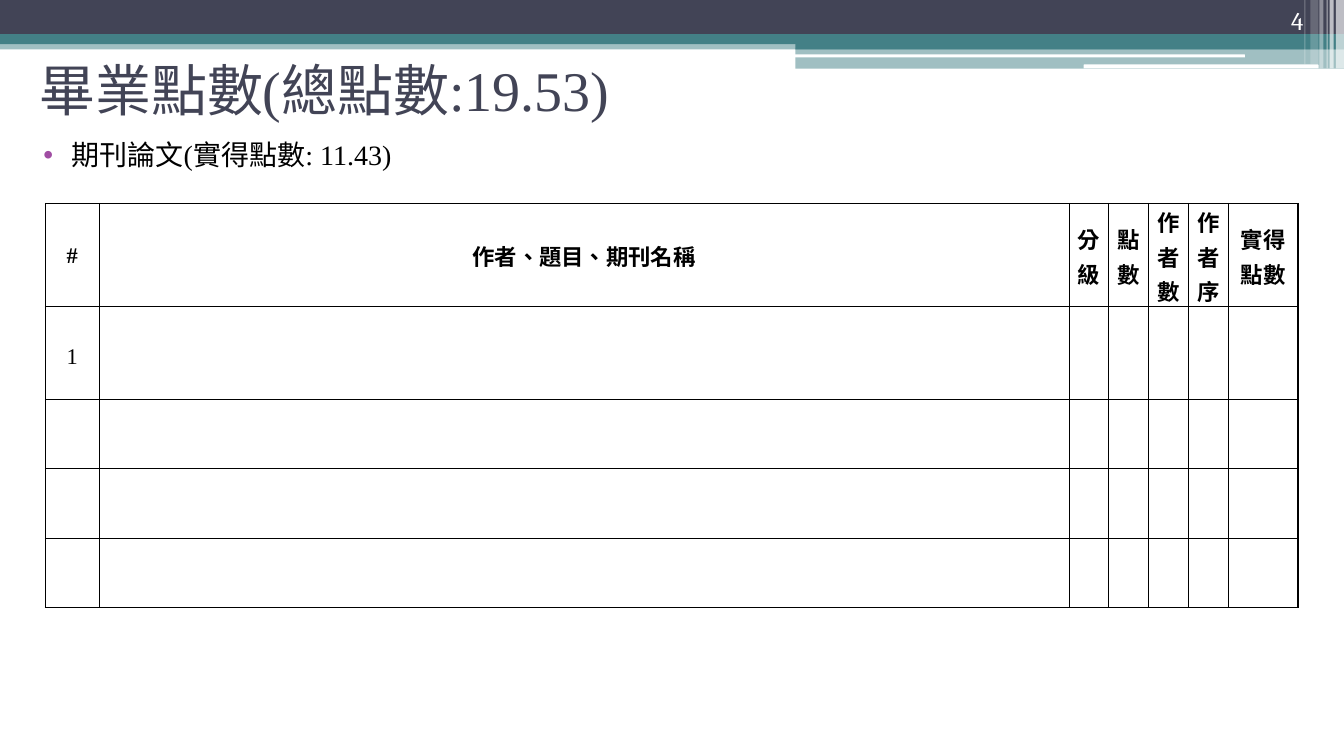
from dataclasses import dataclass

import pptx
import pptx.dml.color
import pptx.enum.lang
import pptx.enum.shapes
import pptx.enum.text
import pptx.oxml
import pptx.oxml.ns
import pptx.util

RGBColor = pptx.dml.color.RGBColor
Align = pptx.enum.text.PP_ALIGN
Anchor = pptx.enum.text.MSO_ANCHOR
Preset = pptx.enum.shapes.MSO_SHAPE

NAVY = RGBColor(0x42, 0x44, 0x56)
TEAL = RGBColor(0x43, 0x80, 0x86)
PURPLE = RGBColor(0xA0, 0x4D, 0xA3)
WHITE = RGBColor(0xFF, 0xFF, 0xFF)
BLACK = RGBColor(0, 0, 0)

SERIF = "Times New Roman"
SLIDE_WIDTH = pptx.util.Inches(13.333)
SLIDE_HEIGHT = pptx.util.Inches(7.5)


@dataclass(frozen=True)
class Area:
    """A rectangle in percent of the slide's width and height."""
    left: float
    top: float
    width: float
    height: float

    def lengths(self) -> tuple[int, int, int, int]:
        return (across(self.left), down(self.top),
                across(self.width), down(self.height))


@dataclass(frozen=True)
class Bar:
    area: Area
    color: RGBColor
    opacity: int = 100
    rounded: bool = False


HEADER_BARS = [
    Bar(Area(0, 5.33, 100, 1.2), TEAL, 50),
    Bar(Area(0, 0, 100, 4.53), NAVY),
    Bar(Area(0, 4.53, 100, 1.33), TEAL),
    Bar(Area(59.18, 5.2, 40.82, 1.33), TEAL),
    Bar(Area(59.18, 6.4, 40.82, 2.67), TEAL, 50),
    Bar(Area(59.1, 7.2, 33.53, 0.4), WHITE, rounded=True),
    Bar(Area(80.63, 8.53, 17.48, 0.53), WHITE, rounded=True),
    Bar(Area(99.4, 0, 0.6, 9.07), WHITE, 65),
    Bar(Area(98.93, 0, 0.3, 9.07), WHITE, 65),
    Bar(Area(98.7, 0, 0.08, 9.07), WHITE, 60),
    Bar(Area(98.18, 0, 0.3, 9.07), WHITE, 40),
    Bar(Area(97.5, 0, 0.6, 8.53), WHITE, 20),
    Bar(Area(97.05, 0, 0.08, 8.53), WHITE, 30),
]

TITLE_AREA = Area(2.18, 1.73, 90, 15.6)
BODY_AREA = Area(1.58, 15.33, 90, 71.2)
NUMBER_AREA = Area(89.4, 0, 8.33, 5.33)

HEADINGS = ["#", "作者、題目、期刊名稱", "分級", "點數", "作者數", "作者序", "實得點數"]
COLUMN_SHARES = [4, 72.17] + [2.96] * 4 + [5.2]
ROW_SHARES = [13.6, 12.27] + [9.2] * 3
TABLE_AREA = Area(3.38, 26.93, sum(COLUMN_SHARES), sum(ROW_SHARES))


def across(percent: float) -> int:
    return round(SLIDE_WIDTH * percent / 100)


def down(percent: float) -> int:
    return round(SLIDE_HEIGHT * percent / 100)


def write_text(frame, text: str, *, size: float, color: RGBColor = BLACK,
               font: str = SERIF, bold: bool = False, align=Align.LEFT,
               anchor=Anchor.TOP, line_spacing: float = 1.0,
               space_before: float = 0):
    """Fill a text frame with one formatted paragraph and return it."""
    frame.word_wrap = True
    frame.vertical_anchor = anchor
    paragraph = frame.paragraphs[0]
    paragraph.alignment = align
    paragraph.line_spacing = line_spacing
    paragraph.space_before = pptx.util.Pt(space_before)
    run = paragraph.add_run()
    run.text = text
    run.font.name = font
    run.font.size = pptx.util.Pt(size)
    run.font.bold = bold
    run.font.color.rgb = color
    run.font.language_id = pptx.enum.lang.MSO_LANGUAGE_ID.TRADITIONAL_CHINESE
    return paragraph


def add_text(slide, area: Area, text: str, **text_format):
    frame = slide.shapes.add_textbox(*area.lengths()).text_frame
    return write_text(frame, text, **text_format)


def add_xml(parent, xml: str) -> None:
    """Append an element, given without its namespace declaration."""
    name, rest = xml.split(" ", 1)
    declaration = pptx.oxml.ns.nsdecls("a")
    parent.append(pptx.oxml.parse_xml(f"{name} {declaration} {rest}"))


def add_bullet(paragraph, color: RGBColor) -> None:
    properties = paragraph._p.get_or_add_pPr()
    properties.set("marL", str(pptx.util.Inches(0.4)))
    properties.set("indent", str(pptx.util.Inches(-0.28)))
    add_xml(properties, f'<a:buClr ><a:srgbClr val="{color}"/></a:buClr>')
    add_xml(properties, '<a:buFont typeface="Arial"/>')
    add_xml(properties, '<a:buChar char="•"/>')


def add_bar(slide, bar: Bar) -> None:
    preset = Preset.ROUNDED_RECTANGLE if bar.rounded else Preset.RECTANGLE
    shape = slide.shapes.add_shape(preset, *bar.area.lengths())
    shape.shadow.inherit = False
    shape.line.fill.background()
    shape.fill.solid()
    shape.fill.fore_color.rgb = bar.color
    if bar.opacity < 100:
        color = shape._element.spPr.find(".//" + pptx.oxml.ns.qn("a:srgbClr"))
        add_xml(color, f'<a:alpha val="{bar.opacity * 1000}"/>')


def style_cell(cell) -> None:
    """Give a cell thin black borders, no fill and narrow margins."""
    properties = cell._tc.get_or_add_tcPr()
    for side in "LRTB":
        add_xml(properties,
                f'<a:ln{side} w="{pptx.util.Pt(1)}"><a:solidFill>'
                f'<a:srgbClr val="{BLACK}"/></a:solidFill></a:ln{side}>')
    cell.fill.background()
    cell.margin_left = cell.margin_right = pptx.util.Inches(0.07)
    cell.margin_top = cell.margin_bottom = 0
    cell.vertical_anchor = Anchor.MIDDLE


def add_points_table(slide) -> None:
    table = slide.shapes.add_table(
        len(ROW_SHARES), len(COLUMN_SHARES), *TABLE_AREA.lengths()).table
    table.first_row = table.horz_banding = False
    for column, share in zip(table.columns, COLUMN_SHARES):
        column.width = across(share)
    for row, share in zip(table.rows, ROW_SHARES):
        row.height = down(share)
    for cell in table.iter_cells():
        style_cell(cell)
    for index, heading in enumerate(HEADINGS):
        write_cell(table.cell(0, index), heading, bold=True, line_spacing=1.07)
    write_cell(table.cell(1, 0), "1", line_spacing=1.3)


def write_cell(cell, text: str, **text_format) -> None:
    write_text(cell.text_frame, text, size=16, align=Align.CENTER,
               anchor=None, **text_format)


def main() -> None:
    presentation = pptx.Presentation()
    presentation.slide_width = SLIDE_WIDTH
    presentation.slide_height = SLIDE_HEIGHT
    slide = presentation.slides.add_slide(presentation.slide_layouts[6])
    for bar in HEADER_BARS:
        add_bar(slide, bar)
    add_text(slide, TITLE_AREA, "畢業點數(總點數:19.53)", size=40, color=NAVY,
             anchor=Anchor.MIDDLE, line_spacing=1.5)
    subject = add_text(slide, BODY_AREA, "期刊論文(實得點數: 11.43)", size=20,
                       line_spacing=1.5, space_before=3)
    add_bullet(subject, PURPLE)
    add_text(slide, NUMBER_AREA, "4", size=18, color=WHITE, font="Cambria",
             align=Align.RIGHT, anchor=Anchor.BOTTOM)
    add_points_table(slide)
    presentation.save("out.pptx")


if __name__ == "__main__":
    main()
